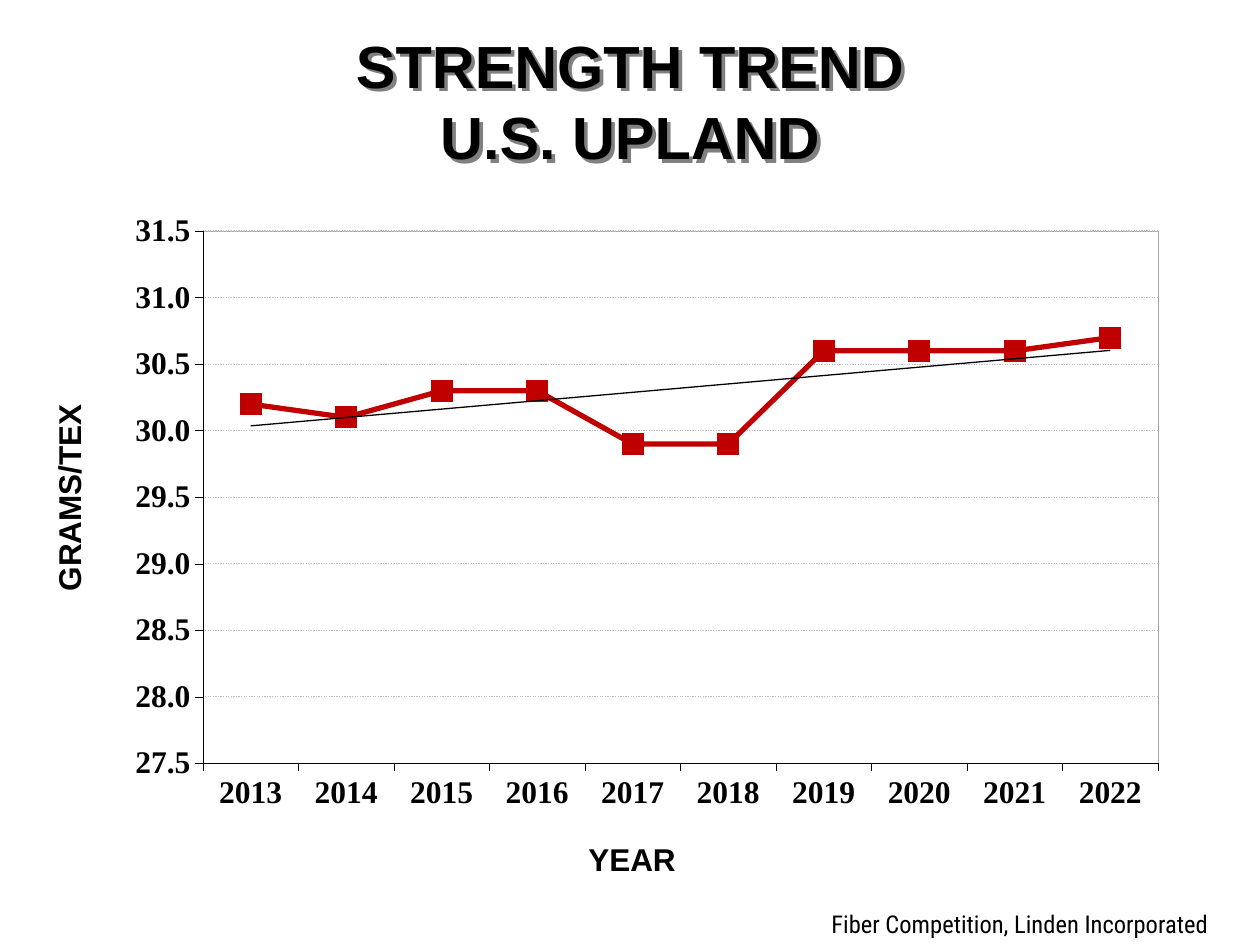
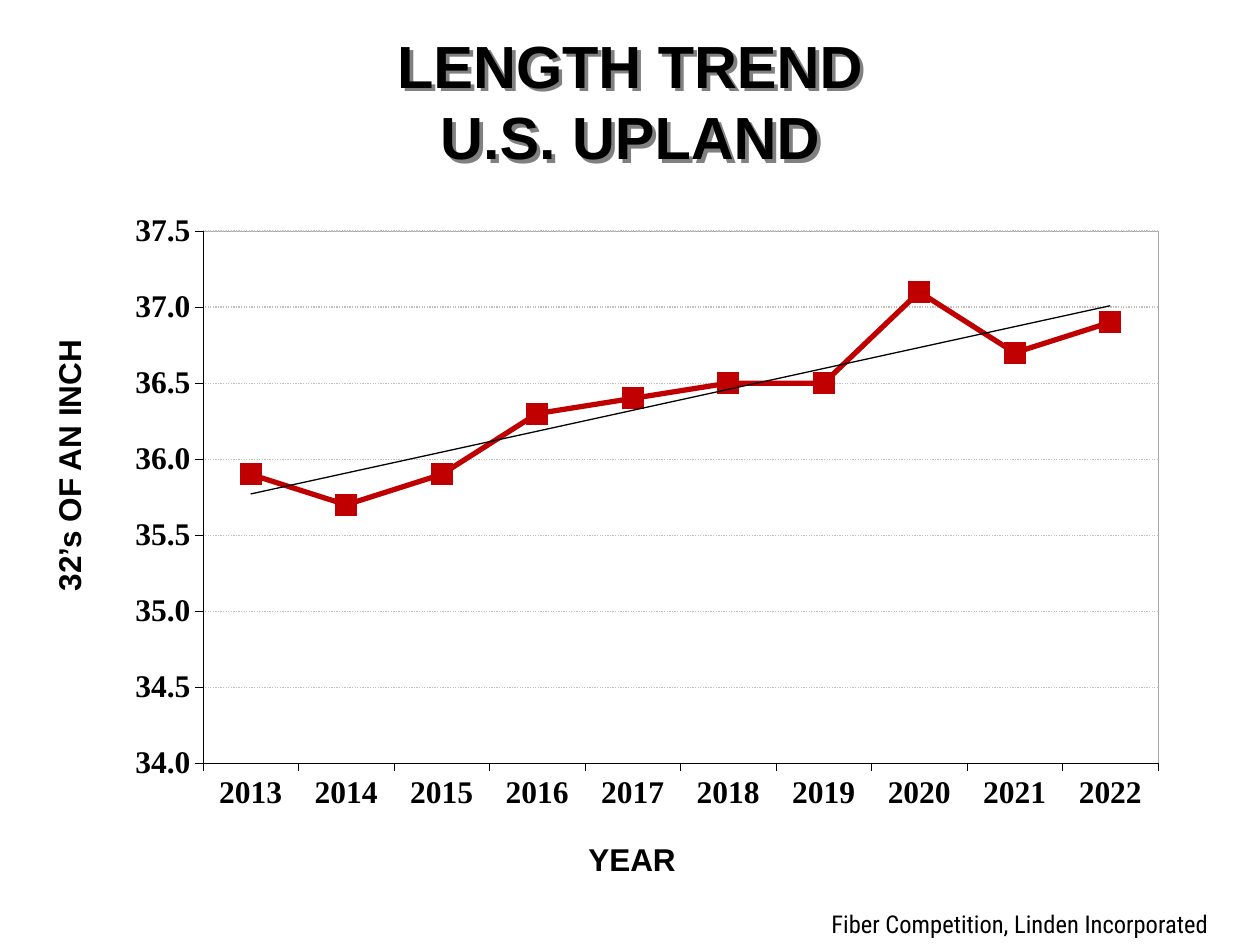
from pptx import Presentation
from pptx.chart.data import CategoryChartData
from pptx.dml.color import RGBColor
from pptx.enum.chart import XL_CHART_TYPE, XL_MARKER_STYLE, XL_TICK_MARK
from pptx.enum.dml import MSO_LINE
from pptx.enum.text import MSO_ANCHOR, MSO_AUTO_SIZE, PP_ALIGN
from pptx.oxml import parse_xml
from pptx.oxml.ns import nsdecls, qn
from pptx.util import Cm, Pt

BLACK = RGBColor(0x00, 0x00, 0x00)
WHITE = RGBColor(0xFF, 0xFF, 0xFF)
RED = RGBColor(0xC0, 0x00, 0x00)
GRAY = RGBColor(0xBF, 0xBF, 0xBF)
LINE = XL_CHART_TYPE.LINE_MARKERS
SQUARE = XL_MARKER_STYLE.SQUARE
OUT = XL_TICK_MARK.OUTSIDE
DOT = MSO_LINE.ROUND_DOT
MID = MSO_ANCHOR.MIDDLE
FIT = MSO_AUTO_SIZE.SHAPE_TO_FIT_TEXT
FIXED = MSO_AUTO_SIZE.NONE
CENTER = PP_ALIGN.CENTER

YEARS = [str(year) for year in range(2013, 2023)]
TRENDS = [
    ("STRENGTH", "GRAMS/TEX", 3.78, 27.5, 31.5,
     [30.2, 30.1, 30.3, 30.3, 29.9, 29.9, 30.6, 30.6, 30.6, 30.7]),
    ("LENGTH", "32’s OF AN INCH", 5.11, 34, 37.5,
     [35.9, 35.7, 35.9, 36.3, 36.4, 36.5, 36.5, 37.1, 36.7, 36.9]),
]
SHADOW = f"""<a:effectLst {nsdecls('a')}>
<a:outerShdw dist="38100" dir="2700000" algn="ctr" rotWithShape="0">
<a:srgbClr val="808080"/></a:outerShdw></a:effectLst>"""
CLEAR = f"""<c:spPr {nsdecls('c', 'a')}><a:noFill/>
<a:ln><a:noFill/></a:ln></c:spPr>"""
FRAME = f"""<c:spPr {nsdecls('c', 'a')}><a:noFill/><a:ln w="3175">
<a:solidFill><a:srgbClr val="A6A6A6"/></a:solidFill></a:ln></c:spPr>"""
LAYOUT = f"""<c:layout {nsdecls('c')}><c:manualLayout>
<c:layoutTarget val="inner"/><c:xMode val="edge"/><c:yMode val="edge"/>
<c:x val="0.141"/><c:y val="0.221"/><c:w val="0.803"/><c:h val="0.616"/>
</c:manualLayout></c:layout>"""
TREND = f"""<c:trendline {nsdecls('c', 'a')}><c:spPr><a:ln w="9525">
<a:solidFill><a:srgbClr val="000000"/></a:solidFill></a:ln></c:spPr>
<c:trendlineType val="linear"/><c:dispRSqr val="0"/><c:dispEq val="0"/>
</c:trendline>"""


def style(font, name, size, bold):
    font.name = name
    font.size = Pt(size)
    font.bold = bold
    font.color.rgb = BLACK


def label(slide, text, left, top, width):
    box = slide.shapes.add_textbox(Cm(left), Cm(top), Cm(width), Cm(0.76))
    frame = box.text_frame
    frame.margin_left = frame.margin_right = 0
    frame.margin_top = frame.margin_bottom = 0
    frame.word_wrap = False
    frame.auto_size = FIT
    frame.text = text
    style(frame.paragraphs[0].runs[0].font, "Arial", 18, True)
    return box


deck = Presentation()
deck.slide_width = Cm(25.4)
deck.slide_height = Cm(19.05)

for topic, unit, span, low, high, values in TRENDS:
    slide = deck.slides.add_slide(deck.slide_layouts[5])
    slide.background.fill.solid()
    slide.background.fill.fore_color.rgb = WHITE

    title = slide.shapes.title
    title.left, title.top = Cm(1.9), Cm(0.43)
    title.width, title.height = Cm(21.6), Cm(3.18)
    frame = title.text_frame
    frame.auto_size = FIXED
    frame.vertical_anchor = MID
    frame.text = f"{topic} TREND\vU.S. UPLAND"
    head = frame.paragraphs[0]
    head.alignment = CENTER
    for run in head.runs:
        style(run.font, "Arial", 34, True)
    title.fill.background()
    title.element.spPr.append(parse_xml(SHADOW))

    side = label(slide, unit, 1.38 - span / 2, 11.54 - span / 2, span)
    side.rotation = 270
    label(slide, "YEAR", 11.86, 16.94, 1.9)

    foot = slide.shapes.add_textbox(Cm(16.51), Cm(18.21), Cm(8.89), Cm(0.84))
    foot.text_frame.word_wrap = True
    foot.text_frame.text = "Fiber Competition, Linden Incorporated"
    style(foot.text_frame.paragraphs[0].runs[0].font, "Roboto Condensed", 14, False)

    data = CategoryChartData(number_format="0.0")
    data.categories = YEARS
    data.add_series("Series 1", values)
    chart = slide.shapes.add_chart(
        LINE, Cm(0.71), Cm(0.81), Cm(23.98), Cm(17.42), data).chart
    chart.has_title = False
    chart.has_legend = False
    style(chart.font, "Times New Roman", 10, False)

    for axis in (chart.category_axis, chart.value_axis):
        axis.major_tick_mark = OUT
        axis.format.line.color.rgb = BLACK
        axis.format.line.width = Pt(0.25)
        style(axis.tick_labels.font, "Times New Roman", 18, True)
    chart.category_axis.has_major_gridlines = False
    scale = chart.value_axis
    scale.minimum_scale = low
    scale.maximum_scale = high
    scale.major_unit = 0.5
    scale.tick_labels.number_format = "0.0"
    scale.tick_labels.number_format_is_linked = False
    grid = scale.major_gridlines.format.line
    grid.color.rgb = GRAY
    grid.width = Pt(0.75)
    grid.dash_style = DOT

    plot = chart.plots[0]
    plot.vary_by_categories = False
    line = plot.series[0]
    line.smooth = False
    line.format.line.color.rgb = RED
    line.format.line.width = Pt(3)
    line.marker.style = SQUARE
    line.marker.size = 12
    line.marker.format.fill.solid()
    line.marker.format.fill.fore_color.rgb = RED
    line.marker.format.line.color.rgb = RED

    root = chart.element.find(qn("c:chart"))
    root.addnext(parse_xml(CLEAR))
    area = root.find(qn("c:plotArea"))
    for old in area.findall(qn("c:layout")):
        area.remove(old)
    area.insert(0, parse_xml(LAYOUT))
    area.append(parse_xml(FRAME))
    next(area.iter(qn("c:cat"))).addprevious(parse_xml(TREND))

deck.save("out.pptx")
